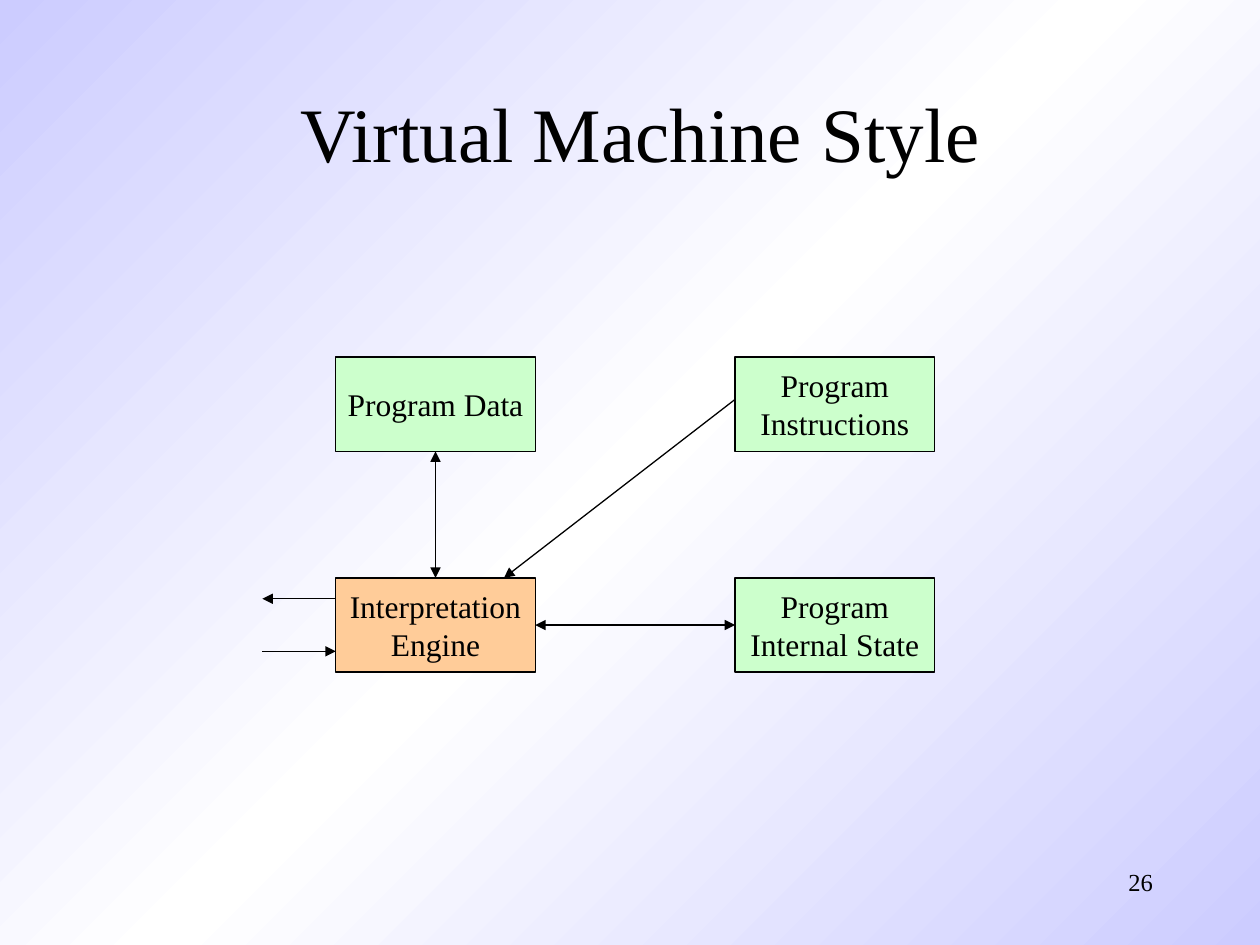
from copy import deepcopy

from lxml import etree
from pptx import Presentation
from pptx.dml.color import RGBColor
from pptx.enum.shapes import MSO_CONNECTOR, MSO_SHAPE
from pptx.enum.text import MSO_ANCHOR, PP_ALIGN
from pptx.oxml.ns import qn
from pptx.util import Cm, Pt

STRAIGHT = MSO_CONNECTOR.STRAIGHT
RECTANGLE = MSO_SHAPE.RECTANGLE
MIDDLE, TOP = MSO_ANCHOR.MIDDLE, MSO_ANCHOR.TOP
CENTER, RIGHT = PP_ALIGN.CENTER, PP_ALIGN.RIGHT
SIDE_TOP, SIDE_LEFT, SIDE_BOTTOM, SIDE_RIGHT = range(4)
FONT = "Times New Roman"
COLORS = {
    "ink": "000000",
    "edge": "CCCCFF",
    "center": "FFFFFF",
    "engine": "FFCC99",
    "program": "CCFFCC",
}
BOX_WIDTH, BOX_HEIGHT = 4.02, 1.9


def color(name):
    """Return the named colour."""
    return RGBColor.from_string(COLORS[name])


def paint_background(slide):
    """Fill the slide with a diagonal gradient that is lightest in the middle."""
    fill = slide.background.fill
    fill.gradient()
    fill.gradient_angle = 315
    first = slide.background._cSld.find(".//" + qn("a:gs"))
    first.addnext(deepcopy(first))
    for stop, position, name in zip(
        fill.gradient_stops, (0, 0.5, 1), ("edge", "center", "edge")
    ):
        stop.position = position
        stop.color.rgb = color(name)


def write_text(frame, lines, size, alignment, anchor):
    """Write one paragraph for each line."""
    frame.vertical_anchor = anchor
    for index, line in enumerate(lines):
        paragraph = frame.paragraphs[0] if index == 0 else frame.add_paragraph()
        paragraph.alignment = alignment
        run = paragraph.add_run()
        run.text = line
        run.font.name = FONT
        run.font.size = Pt(size)
        run.font.color.rgb = color("ink")


def add_label(slide, box, text, size, alignment, anchor):
    """Add a wrapped text box that fills the given box."""
    frame = slide.shapes.add_textbox(*map(Cm, box)).text_frame
    frame.word_wrap = True
    write_text(frame, [text], size, alignment, anchor)


def add_component(slide, left, top, lines, fill):
    """Add one outlined component of the diagram."""
    shape = slide.shapes.add_shape(
        RECTANGLE, Cm(left), Cm(top), Cm(BOX_WIDTH), Cm(BOX_HEIGHT)
    )
    shape.shadow.inherit = False
    shape.fill.solid()
    shape.fill.fore_color.rgb = color(fill)
    shape.line.color.rgb = color("ink")
    shape.line.width = Pt(0.75)
    shape.text_frame.word_wrap = False
    write_text(shape.text_frame, lines, 18, CENTER, MIDDLE)
    return shape


def add_arrow(slide, start=(0, 0), end=(0, 0), both=False):
    """Add a straight arrow that points at its end, or at both ends."""
    arrow = slide.shapes.add_connector(STRAIGHT, *map(Cm, (*start, *end)))
    arrow.line.color.rgb = color("ink")
    arrow.line.width = Pt(0.75)
    line = arrow.line._get_or_add_ln()
    for tag in ("a:headEnd", "a:tailEnd") if both else ("a:tailEnd",):
        etree.SubElement(line, qn(tag), type="triangle")
    etree.SubElement(arrow._element.spPr, qn("a:effectLst"))
    return arrow


def join(slide, first, first_side, second, second_side):
    """Join two components with a two-way arrow."""
    arrow = add_arrow(slide, both=True)
    arrow.begin_connect(first, first_side)
    arrow.end_connect(second, second_side)


def add_diagram(slide, left, top, width, height):
    """Place the four components and their arrows inside the given box."""
    near, far = left + 1.48, left + width - BOX_WIDTH
    lower = top + height - BOX_HEIGHT
    engine = add_component(slide, near, lower, ["Interpretation", "Engine"], "engine")
    data = add_component(slide, near, top, ["Program Data"], "program")
    add_component(slide, far, top, ["Program", "Instructions"], "program")
    state = add_component(slide, far, lower, ["Program", "Internal State"], "program")
    join(slide, data, SIDE_BOTTOM, engine, SIDE_TOP)
    join(slide, state, SIDE_LEFT, engine, SIDE_RIGHT)
    output_y, input_y = lower + 0.42, lower + 1.48
    add_arrow(slide, (near, output_y), (left, output_y))
    add_arrow(slide, (left, input_y), (near, input_y))
    add_arrow(slide, (far, top + 0.85), (near + 3.39, lower))


def main():
    """Build and save the slide."""
    presentation = Presentation()
    presentation.slide_width, presentation.slide_height = Cm(25.4), Cm(19.05)
    slide = presentation.slides.add_slide(presentation.slide_layouts[6])
    paint_background(slide)
    add_label(slide, (18.2, 17.36, 5.29, 1.27), "26", 14, RIGHT, TOP)
    add_label(
        slide, (2.12, 1.06, 21.59, 3.18), "Virtual Machine Style", 44, CENTER, MIDDLE
    )
    add_diagram(slide, 5.29, 7.2, 13.55, 6.35)
    presentation.save("out.pptx")


if __name__ == "__main__":
    main()
